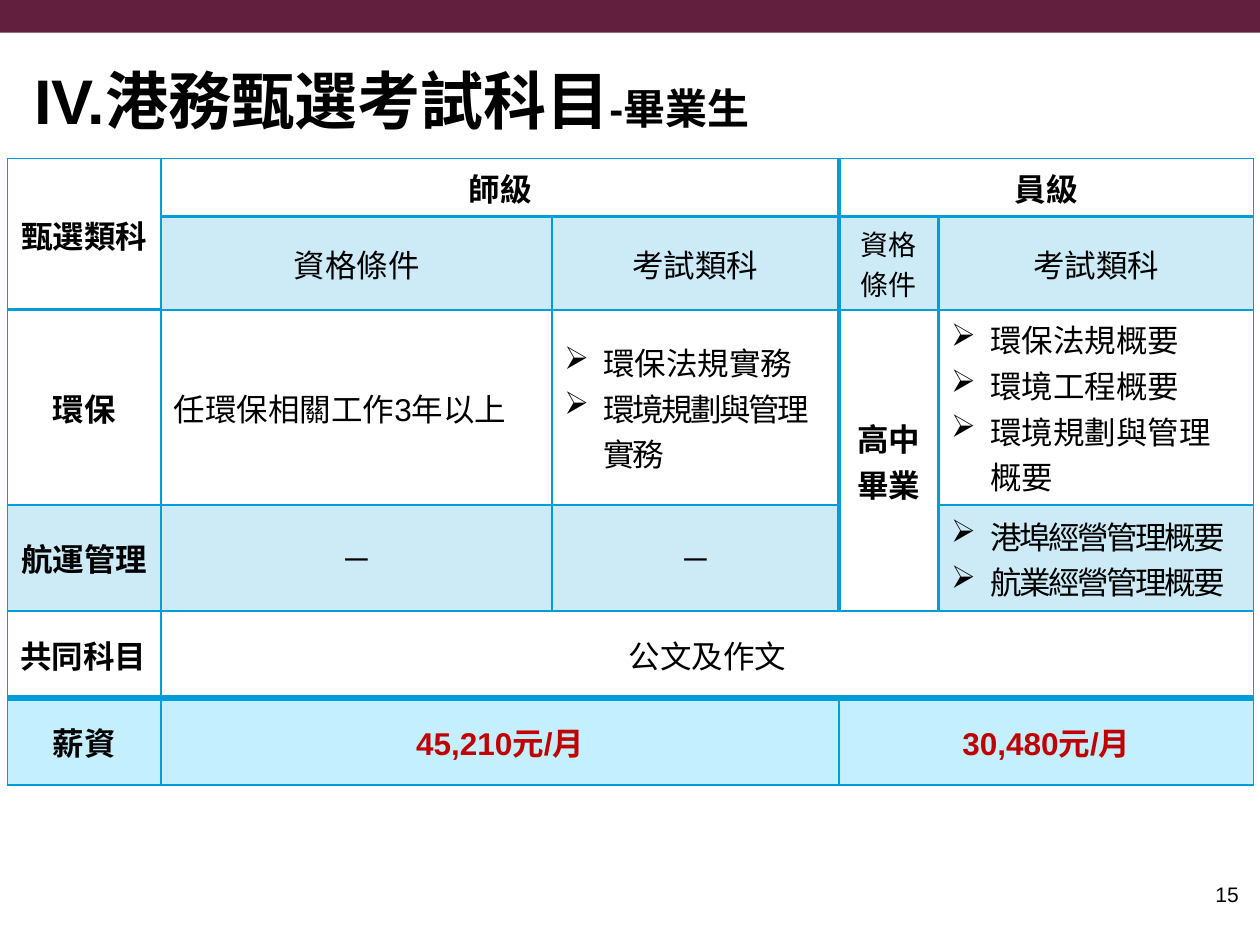
from dataclasses import dataclass

from lxml import etree
from pptx import Presentation
from pptx.dml.color import RGBColor
from pptx.enum import shapes, text
from pptx.oxml import ns
from pptx.util import Inches, Pt

COLORS = {"band": "621F3E", "line": "009DD9", "tint": "009DD9",
          "salary": "C4EFFF", "ink": "000000", "amount": "C00000"}
FONT = "Arial"
LEFT, CENTER, RIGHT = (text.PP_ALIGN.LEFT, text.PP_ALIGN.CENTER,
                       text.PP_ALIGN.RIGHT)
COLUMNS = (1.22, 3.1, 2.28, 0.79, 2.5)
ROWS = (0.46, 0.74, 1.55, 0.84, 0.69, 0.69)


@dataclass
class Entry:
    row: int
    col: int
    lines: tuple[str, ...]
    rows: int = 1
    cols: int = 1
    bold: bool = False
    size: float = 18
    color: str = "ink"
    fill: str | None = None
    align: text.PP_ALIGN = CENTER
    anchor: text.MSO_ANCHOR = text.MSO_ANCHOR.MIDDLE
    bullets: bool = False
    tight: tuple[int, ...] = ()  # lines with condensed letter spacing


TOP = text.MSO_ANCHOR.TOP
ENTRIES = (
    Entry(0, 0, ("甄選類科",), rows=2, bold=True),
    Entry(0, 1, ("師級",), cols=2, bold=True, anchor=TOP),
    Entry(0, 3, ("員級",), cols=2, bold=True, anchor=TOP),
    Entry(1, 1, ("資格條件",), fill="tint"),
    Entry(1, 2, ("考試類科",), fill="tint"),
    Entry(1, 3, ("資格條件",), size=16, fill="tint"),
    Entry(1, 4, ("考試類科",), fill="tint"),
    Entry(2, 0, ("環保",), bold=True),
    Entry(2, 1, ("任環保相關工作3年以上",), align=LEFT),
    Entry(2, 2, ("環保法規實務", "環境規劃與管理實務"), align=LEFT,
          bullets=True, tight=(1,)),
    Entry(2, 3, ("高中畢業",), rows=2, bold=True),
    Entry(2, 4, ("環保法規概要", "環境工程概要", "環境規劃與管理概要"),
          align=LEFT, bullets=True),
    Entry(3, 0, ("航運管理",), bold=True, fill="tint"),
    Entry(3, 1, ("─",), fill="tint"),
    Entry(3, 2, ("─",), fill="tint"),
    Entry(3, 4, ("港埠經營管理概要", "航業經營管理概要"), fill="tint",
          align=LEFT, bullets=True, tight=(0, 1)),
    Entry(4, 0, ("共同科目",), bold=True, align=LEFT),
    Entry(4, 1, ("公文及作文",), cols=4),
    Entry(5, 0, ("薪資",), bold=True, fill="salary"),
    Entry(5, 1, ("45,210元/月",), cols=2, bold=True, color="amount",
          fill="salary"),
    Entry(5, 3, ("30,480元/月",), cols=2, bold=True, color="amount",
          fill="salary"),
)


def rgb(name: str) -> RGBColor:
    return RGBColor.from_string(COLORS[name])


def add_span(para, words: str, size: float, bold: bool = False,
             color: str = "ink"):
    span = para.add_run()
    span.text = words
    formats = {"name": FONT, "size": Pt(size), "bold": bold}
    for key, value in formats.items():
        setattr(span.font, key, value)
    span.font.color.rgb = rgb(color)
    return span


def add_bullet(para) -> None:
    """Hang an arrowhead bullet, which Wingdings keeps at the letter Ø."""
    props = para._p.get_or_add_pPr()
    props.set("marL", str(Inches(0.31)))
    props.set("indent", str(-Inches(0.31)))
    etree.SubElement(props, ns.qn("a:buFont"), typeface="Wingdings",
                     charset="2")
    etree.SubElement(props, ns.qn("a:buChar")).set("char", "Ø")


def vertical_width(row: int, edge: int) -> float:
    """Points of the rule at a column edge; the lower grade is set apart."""
    heavy = (edge == 3 and row <= 3) or (edge == 4 and 1 <= row <= 3)
    return 2.25 if heavy else 1


def horizontal_width(col: int, edge: int) -> float:
    """Points of the rule at a row edge, heavy under headings and over pay."""
    if edge == 5:
        return 4
    return 2 if edge == (2 if col == 0 else 1) else 1


def draw_borders(cell, row: int, col: int) -> None:
    props = cell._tc.get_or_add_tcPr()
    widths = {"a:lnL": vertical_width(row, col),
              "a:lnR": vertical_width(row, col + 1),
              "a:lnT": horizontal_width(col, row),
              "a:lnB": horizontal_width(col, row + 1)}
    for tag, width in widths.items():
        line = etree.SubElement(props, ns.qn(tag), w=str(Pt(width)))
        solid = etree.SubElement(line, ns.qn("a:solidFill"))
        etree.SubElement(solid, ns.qn("a:srgbClr"), val=COLORS["line"])


def fill_entry(table, entry: Entry) -> None:
    cell = table.cell(entry.row, entry.col)
    if entry.rows > 1 or entry.cols > 1:
        cell.merge(table.cell(entry.row + entry.rows - 1,
                              entry.col + entry.cols - 1))
    cell.vertical_anchor = entry.anchor
    if entry.fill:
        cell.fill.solid()
        cell.fill.fore_color.rgb = rgb(entry.fill)
    if entry.fill == "tint":
        color = cell._tc.tcPr.find(ns.qn("a:solidFill"))[0]
        etree.SubElement(color, ns.qn("a:alpha"), val="20000")
    frame = cell.text_frame
    for index, words in enumerate(entry.lines):
        para = frame.add_paragraph() if index else frame.paragraphs[0]
        para.alignment = entry.align
        if entry.bullets:
            add_bullet(para)
        span = add_span(para, words, entry.size, entry.bold, entry.color)
        if index in entry.tight:
            span._r.get_or_add_rPr().set("spc", "-140")


def add_subject_table(page) -> None:
    holder = page.shapes.add_table(len(ROWS), len(COLUMNS), Inches(0.06),
                                   Inches(1.26), Inches(sum(COLUMNS)),
                                   Inches(sum(ROWS)))
    table = holder.table
    table.first_row = table.horz_banding = False
    for column, width in zip(table.columns, COLUMNS):
        column.width = Inches(width)
    for row, height in zip(table.rows, ROWS):
        row.height = Inches(height)
    for row in range(len(ROWS)):
        for col in range(len(COLUMNS)):
            cell = table.cell(row, col)
            draw_borders(cell, row, col)
            cell.fill.background()
    for entry in ENTRIES:
        fill_entry(table, entry)


def place_title(title) -> None:
    box = {"left": 0.17, "top": 0.31, "width": 7.66, "height": 0.95}
    for key, value in box.items():
        setattr(title, key, Inches(value))
    frame = title.text_frame
    frame.auto_size = text.MSO_AUTO_SIZE.NONE
    frame.vertical_anchor = text.MSO_ANCHOR.MIDDLE
    para = frame.paragraphs[0]
    para.alignment = LEFT
    add_span(para, "IV.港務甄選考試科目", 36, True)
    add_span(para, "-畢業生", 24, True)


def add_page_number(page) -> None:
    box = page.shapes.add_textbox(Inches(7.6), Inches(6.9), Inches(2.33),
                                  Inches(0.4))
    frame = box.text_frame
    frame.word_wrap = True
    frame.vertical_anchor = text.MSO_ANCHOR.MIDDLE
    frame.paragraphs[0].alignment = RIGHT
    add_span(frame.paragraphs[0], "15", 12)


def main() -> None:
    deck = Presentation()
    deck.slide_width, deck.slide_height = Inches(10), Inches(7.5)
    page = deck.slides.add_slide(deck.slide_layouts[5])
    band = page.shapes.add_shape(shapes.MSO_SHAPE.RECTANGLE, Inches(-0.03),
                                 Inches(-0.03), Inches(10.04), Inches(0.29))
    band.shadow.inherit = False
    band.fill.solid()
    band.fill.fore_color.rgb = rgb("band")
    band.line.fill.background()
    place_title(page.shapes.title)
    add_page_number(page)
    add_subject_table(page)
    deck.save("out.pptx")


if __name__ == "__main__":
    main()
